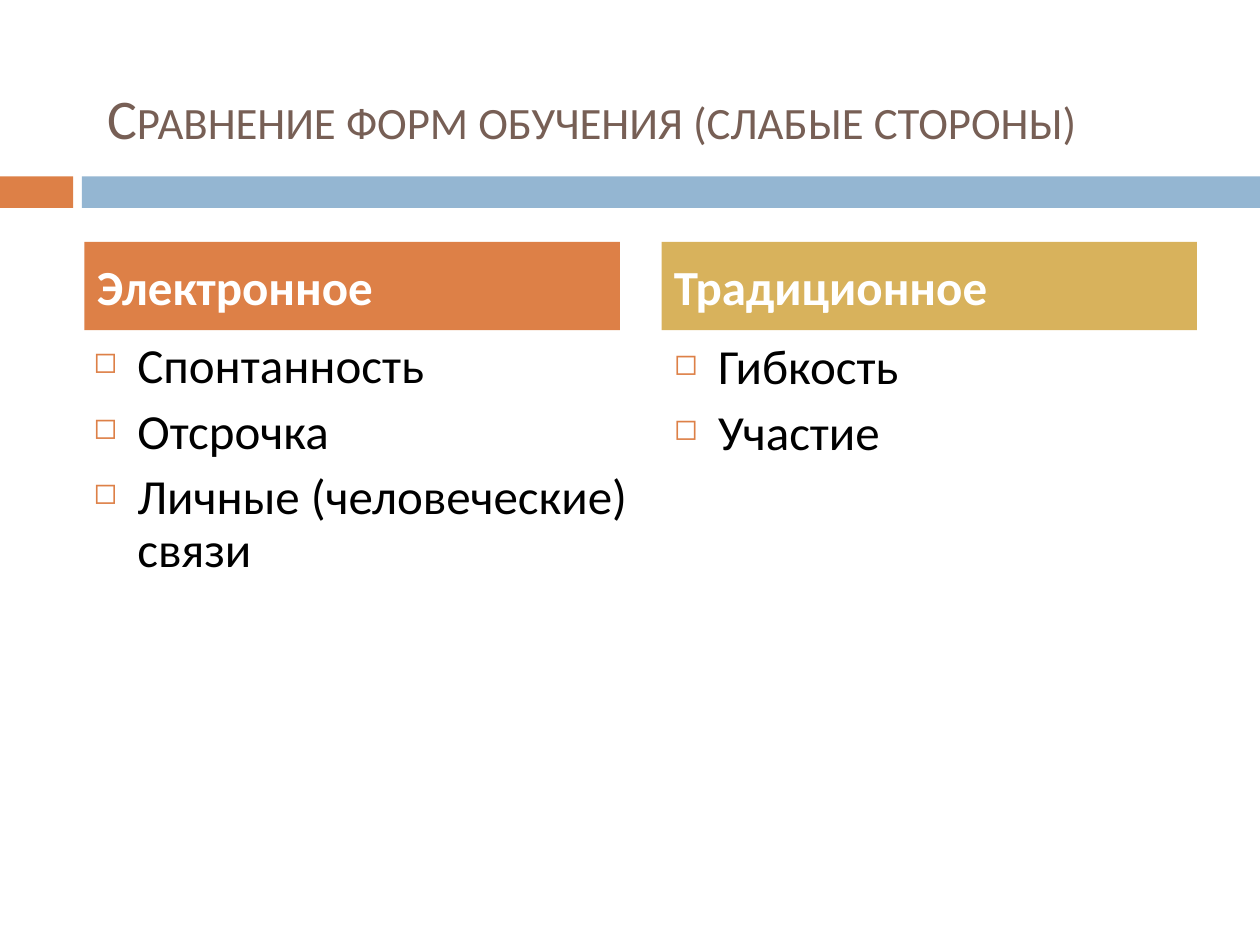
from pptx import Presentation
from pptx.dml.color import RGBColor
from pptx.enum.shapes import MSO_SHAPE
from pptx.enum.text import MSO_ANCHOR, PP_ALIGN
from pptx.oxml.ns import qn
from pptx.util import Inches, Pt
from lxml.etree import SubElement

COLORS = {
    "orange": "DD8047",
    "blue": "94B6D2",
    "gold": "D8B25C",
    "brown": "775F55",
    "black": "000000",
    "white": "FFFFFF",
}
FONT = "Calibri"
COLUMN_WIDTH = 4.25
INSETS = (0.1, 0.05)

# heading, colour, left, list box width and height, list insets, points
COLUMNS = [
    ("Электронное", "orange", 0.67, 4.41, 3.05, (0.07, 0.04),
     ["Спонтанность", "Отсрочка", "Личные (человеческие) связи"]),
    ("Традиционное", "gold", 5.25, COLUMN_WIDTH, 3.92, INSETS,
     ["Гибкость", "Участие"]),
]


def rgb(color):
    return RGBColor.from_string(COLORS[color])


def apply(target, values):
    for name, value in values.items():
        setattr(target, name, value)


def place(shape, left, top, width, height):
    apply(shape, {"left": Inches(left), "top": Inches(top),
                  "width": Inches(width), "height": Inches(height)})


def set_frame(frame, anchor, insets=INSETS):
    side, end = (Inches(inset) for inset in insets)
    apply(frame, {"word_wrap": True, "vertical_anchor": anchor,
                  "margin_left": side, "margin_right": side,
                  "margin_top": end, "margin_bottom": end})


def write(paragraph, text, color, size=28, bold=False, **spacing):
    run = paragraph.add_run()
    run.text = text
    apply(run.font, {"name": FONT, "size": Pt(size), "bold": bold})
    run.font.color.rgb = rgb(color)
    apply(paragraph, {"alignment": PP_ALIGN.LEFT, **spacing})
    return run


def add_bar(slide, color, left, top, width, height):
    bar = slide.shapes.add_shape(
        MSO_SHAPE.RECTANGLE, *map(Inches, (left, top, width, height)))
    bar.shadow.inherit = False
    bar.fill.solid()
    bar.fill.fore_color.rgb = rgb(color)
    bar.line.fill.background()
    return bar


def add_bullet(paragraph):
    properties = paragraph._p.get_or_add_pPr()
    properties.set("marL", str(Inches(0.35)))
    properties.set("indent", str(Inches(-0.35)))
    bullet_color = SubElement(properties, qn("a:buClr"))
    SubElement(bullet_color, qn("a:srgbClr"), val=COLORS["orange"])
    SubElement(properties, qn("a:buSzPct"), val="60000")
    SubElement(properties, qn("a:buChar"), char="◻")


def add_title(slide, text, left, top, width, height):
    title = slide.shapes.title
    place(title, left, top, width, height)
    set_frame(title.text_frame, MSO_ANCHOR.BOTTOM)
    run = write(title.text_frame.paragraphs[0], text, "brown", size=32)
    run.font._element.set("cap", "small")


def add_divider(slide, top, height):
    add_bar(slide, "orange", 0, top, 0.58, height)
    add_bar(slide, "blue", 0.65, top, 9.35, height)


def add_column(slide, top, heading, color, left, width, height, insets, points):
    # Coloured heading
    header = add_bar(slide, color, left, top, COLUMN_WIDTH, 0.7)
    set_frame(header.text_frame, MSO_ANCHOR.MIDDLE)
    write(header.text_frame.paragraphs[0], heading, "white", bold=True,
          space_before=Pt(7))

    # Bulleted list
    box = slide.shapes.add_textbox(
        *map(Inches, (left, top + 0.75, width, height)))
    frame = box.text_frame
    set_frame(frame, MSO_ANCHOR.TOP, insets)
    for index, point in enumerate(points):
        paragraph = frame.add_paragraph() if index else frame.paragraphs[0]
        write(paragraph, point, "black", space_before=Pt(7), line_spacing=0.9)
        add_bullet(paragraph)


def main():
    presentation = Presentation()
    apply(presentation, {"slide_width": Inches(10), "slide_height": Inches(7.5)})
    slide = presentation.slides.add_slide(presentation.slide_layouts[5])
    add_divider(slide, 1.4, 0.25)
    add_title(slide, "Сравнение форм обучения (слабые стороны)",
              0.75, 0, 8.25, 1.25)
    for column in COLUMNS:
        add_column(slide, 1.92, *column)
    presentation.save("out.pptx")


if __name__ == "__main__":
    main()
